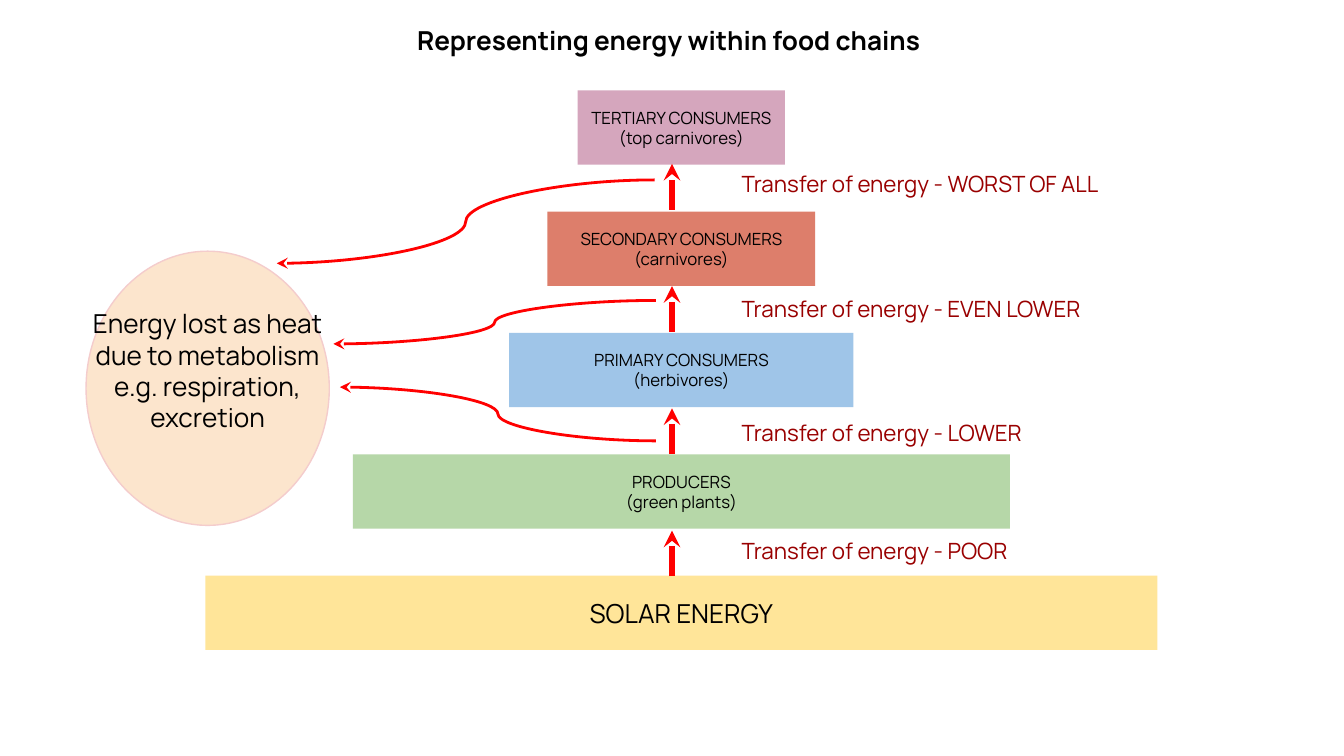
from lxml import etree
from pptx import Presentation
from pptx.dml.color import RGBColor
from pptx.enum import shapes, text
from pptx.oxml import ns
from pptx.util import Pt

FONT = "Manrope"
RED = "FF0000"


def color(value):
    return RGBColor.from_string(value)


def write(shape, lines, size=12, ink="000000", bold=False,
          align=text.PP_ALIGN.CENTER, anchor=text.MSO_ANCHOR.TOP):
    frame = shape.text_frame
    frame.word_wrap = True
    frame.auto_size = text.MSO_AUTO_SIZE.NONE
    frame.vertical_anchor = anchor
    frame.margin_left = frame.margin_right = Pt(7.2)
    frame.margin_top = frame.margin_bottom = Pt(7.2)
    frame.text = "\n".join(lines)
    for paragraph in frame.paragraphs:
        paragraph.alignment = align
        paragraph.line_spacing = 1.0
        paragraph.space_before = Pt(0)
        font = paragraph.font
        font.name, font.size, font.bold = FONT, Pt(size), bold
        font.color.rgb = color(ink)


def add_block(slide, kind, box, fill, outline=None):
    block = slide.shapes.add_shape(kind, *map(Pt, box))
    block.shadow.inherit = False
    block.fill.solid()
    block.fill.fore_color.rgb = color(fill)
    if outline:
        block.line.color.rgb = color(outline)
        block.line.width = Pt(0.75)
    else:
        block.line.fill.background()
    return block


def add_label(slide, box, lines, **style):
    write(slide.shapes.add_textbox(*map(Pt, box)), lines, **style)


def add_arrow(slide, kind, start, end, width, tip):
    arrow = slide.shapes.add_connector(kind, *map(Pt, start + end))
    arrow.line.color.rgb = color(RED)
    arrow.line.width = Pt(width)
    etree.SubElement(arrow.line._get_or_add_ln(), ns.qn(f"a:{tip}"), type="stealth")
    etree.SubElement(arrow._element.spPr, ns.qn("a:effectLst"))


def add_title(slide, box, heading):
    title = slide.shapes.title
    title.left, title.top, title.width, title.height = map(Pt, box)
    write(title, [heading], size=14, bold=True)


def add_pyramid(slide, box):
    left, top, width, height = box
    center, step, tier_height = left + width / 2, 65, 39.8
    base = top + height - tier_height

    # Trophic levels, from the base upwards: width, fill, text size, lines
    tiers = [
        (width, "FFE599", 14, ["SOLAR ENERGY"]),
        (352, "B6D7A8", 9, ["PRODUCERS", "(green plants)"]),
        (184.4, "9FC5E8", 9, ["PRIMARY CONSUMERS", "(herbivores)"]),
        (143.4, "DD7E6B", 9, ["SECONDARY CONSUMERS", "(carnivores)"]),
        (111, "D5A6BD", 9, ["TERTIARY CONSUMERS", "(top carnivores)"]),
    ]
    for level, (tier_width, fill, size, lines) in enumerate(tiers):
        tier = add_block(slide, shapes.MSO_SHAPE.RECTANGLE,
                         (center - tier_width / 2, base - level * step,
                          tier_width, tier_height), fill)
        write(tier, lines, size=size, anchor=text.MSO_ANCHOR.MIDDLE)

    # Energy passed up between levels: efficiency, label top, label width
    transfers = [("POOR", -27.6, 184), ("LOWER", -91, 184),
                 ("EVEN LOWER", -157.2, 227), ("WORST OF ALL", -224.2, 256)]
    flow_x = center - 5
    for level, (efficiency, offset, label_width) in enumerate(transfers):
        start_y = base + 0.4 - level * 65.5
        add_arrow(slide, shapes.MSO_CONNECTOR.STRAIGHT,
                  (flow_x, start_y), (flow_x, start_y - 24.5), 3, "tailEnd")
        add_label(slide, (center + 25.2, base + offset, label_width, 28.8),
                  [f"Transfer of energy - {efficiency}"],
                  ink="990000", align=text.PP_ALIGN.LEFT)


def add_heat_loss(slide, box):
    left, top, width, height = box
    add_block(slide, shapes.MSO_SHAPE.OVAL, box, "FCE5CD", outline="F4CCCC")
    add_label(slide, (left - 5.8, top + 23, width + 11.6, 99.4),
              ["Energy lost as heat due to metabolism e.g. respiration, excretion"],
              size=14)

    # Losses curve from each transfer to the heat circle
    losses = [((102.2, 6.5), (304.6, -38.2)),
              ((132.5, 49.7), (305.3, 26.4)),
              ((136, 72.8), (305.3, 101.6))]
    for heat_end, transfer_end in losses:
        add_arrow(slide, shapes.MSO_CONNECTOR.CURVE,
                  (left + heat_end[0], top + heat_end[1]),
                  (left + transfer_end[0], top + transfer_end[1]),
                  1.5, "headEnd")


def main():
    deck = Presentation()
    deck.slide_width, deck.slide_height = Pt(720), Pt(405)
    slide = deck.slides.add_slide(deck.slide_layouts[5])
    add_title(slide, (194.5, 5.8, 327.6, 31.7),
              "Representing energy within food chains")
    add_pyramid(slide, (110, 48.4, 510, 299.8))
    add_heat_loss(slide, (46.1, 134.6, 130.3, 146.9))
    deck.save("out.pptx")


if __name__ == "__main__":
    main()
